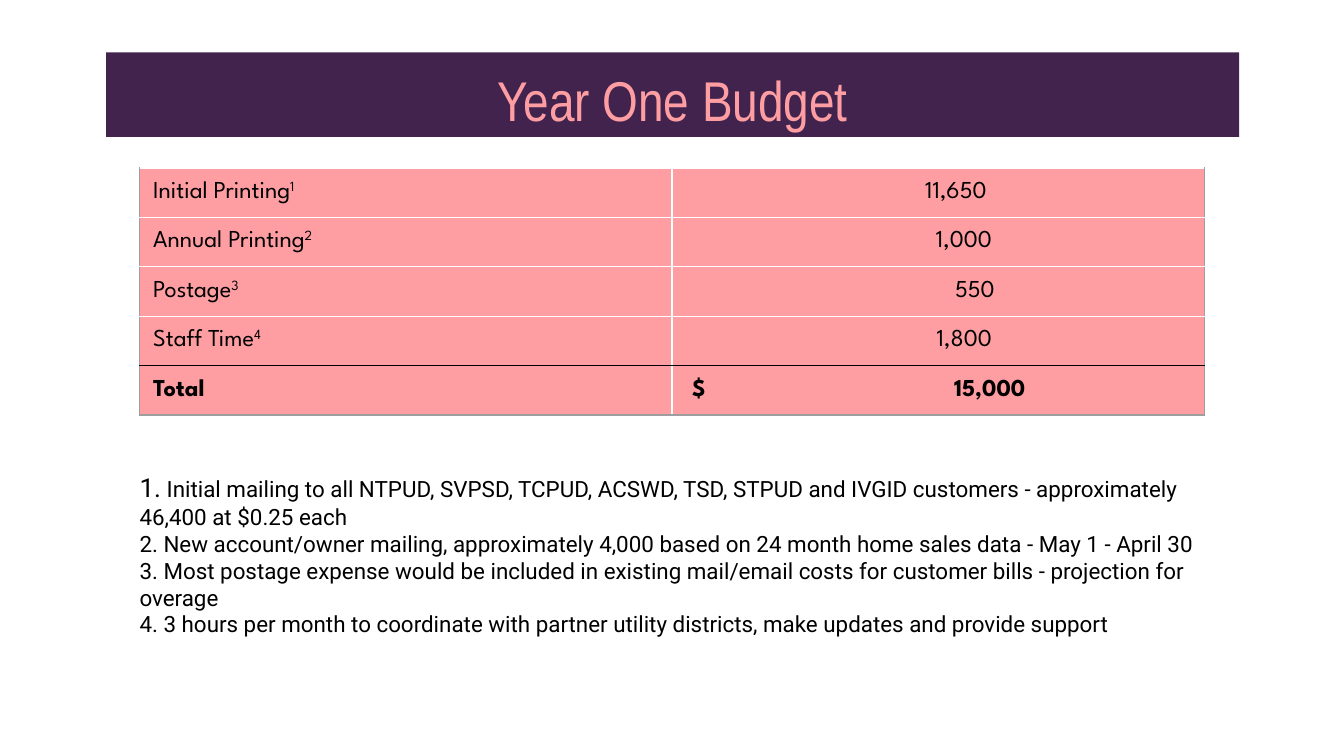
from dataclasses import dataclass

from lxml.etree import SubElement
from pptx import Presentation
from pptx.dml.color import RGBColor
from pptx.enum.shapes import MSO_SHAPE
from pptx.enum.text import MSO_ANCHOR, PP_ALIGN
from pptx.oxml.ns import qn
from pptx.util import Inches, Pt

PLUM = RGBColor(0x42, 0x23, 0x4E)
PINK = RGBColor(0xFE, 0x9E, 0xA2)
BLACK = RGBColor(0, 0, 0)
WHITE = RGBColor(255, 255, 255)
GRAY = RGBColor(0x9E, 0x9E, 0x9E)


@dataclass
class BudgetItem:
    name: str
    amount: str
    note: str = ""
    right_margin: float = 1.58


ITEMS = [
    BudgetItem("Initial Printing", "11,650", "1", 1.62),
    BudgetItem("Annual Printing", "1,000", "2"),
    BudgetItem("Postage", "550", "3", 1.56),
    BudgetItem("Staff Time", "1,800", "4"),
    BudgetItem("Total", "$\t15,000", right_margin=0.1),
]

NOTES = [
    "Initial mailing to all NTPUD, SVPSD, TCPUD, ACSWD, TSD, STPUD and IVGID "
    "customers - approximately 46,400 at $0.25 each",
    "New account/owner mailing, approximately 4,000 based on 24 month home sales "
    "data - May 1 - April 30",
    "Most postage expense would be included in existing mail/email costs for "
    "customer bills - projection for overage",
    "3 hours per month to coordinate with partner utility districts, make updates "
    "and provide support",
]


def set_font(font, name: str, size: float, color: RGBColor, bold: bool = False) -> None:
    font.name, font.size, font.bold = name, Pt(size), bold
    font.color.rgb = color


def add_title(slide, text: str) -> None:
    sp = slide.shapes.add_shape(
        MSO_SHAPE.RECTANGLE, Inches(0.79), Inches(0.39), Inches(8.43), Inches(0.63))
    sp.shadow.inherit = False
    sp.fill.solid()
    sp.fill.fore_color.rgb = PLUM
    sp.line.fill.background()
    tf = sp.text_frame
    tf.vertical_anchor = MSO_ANCHOR.TOP
    tf.margin_top = tf.margin_bottom = Inches(0.1)
    p = tf.paragraphs[0]
    p.text = text
    p.alignment = PP_ALIGN.CENTER
    set_font(p.font, "Arial Narrow", 30, PINK)


def style_cell(cell, borders: dict[str, RGBColor]) -> None:
    cell.margin_left = cell.margin_right = Inches(0.1)
    cell.margin_top = cell.margin_bottom = Inches(0.1)
    tc_pr = cell._tc.get_or_add_tcPr()
    for side, color in borders.items():
        ln = SubElement(tc_pr, qn(f"a:{side}"), w=str(Pt(0.75)))
        fill = SubElement(ln, qn("a:solidFill"))
        SubElement(fill, qn("a:srgbClr"), val=str(color))
    cell.fill.solid()
    cell.fill.fore_color.rgb = PINK


def add_tab(p, position: int) -> None:
    tabs = SubElement(p._p.get_or_add_pPr(), qn("a:tabLst"))
    SubElement(tabs, qn("a:tab"), pos=str(position), algn="l")


def add_budget(slide, items: list[BudgetItem]) -> None:
    last = len(items) - 1
    table = slide.shapes.add_table(
        len(items), 2, Inches(1.04), Inches(1.25), Inches(7.92),
        Inches(0.36 * len(items))).table
    table.first_row = table.horz_banding = False
    for i, item in enumerate(items):
        top = BLACK if i == last else WHITE
        bottom = {last - 1: BLACK, last: GRAY}.get(i, WHITE)
        name, amount = table.cell(i, 0), table.cell(i, 1)
        style_cell(name, {"lnL": GRAY, "lnR": WHITE, "lnT": top, "lnB": bottom})
        style_cell(amount, {"lnL": WHITE, "lnR": GRAY, "lnT": top, "lnB": bottom})

        p = name.text_frame.paragraphs[0]
        p.add_run().text = item.name
        if item.note:
            r = p.add_run()
            r.text = item.note
            r.font._element.set("baseline", "30000")
        set_font(p.font, "League Spartan", 13, BLACK, i == last)

        p = amount.text_frame.paragraphs[0]
        p.text = item.amount
        amount.margin_right = Inches(item.right_margin)
        if i == last:
            amount.margin_left = Inches(0.15)
            add_tab(p, Inches(1.95))
        else:
            p.alignment = PP_ALIGN.RIGHT
        set_font(p.font, "League Spartan", 13, BLACK, i == last)


def add_notes(slide, notes: list[str]) -> None:
    tf = slide.shapes.add_textbox(
        Inches(0.94), Inches(3.41), Inches(8.23), Inches(1.18)).text_frame
    tf.word_wrap = True
    tf.margin_left = tf.margin_right = Inches(0.1)
    tf.margin_top = tf.margin_bottom = Inches(0.1)
    for i, note in enumerate(notes):
        p = tf.paragraphs[0] if i == 0 else tf.add_paragraph()
        number = p.add_run()
        number.text = f"{i + 1}."
        if i == 0:
            number.font.size = Pt(14)
        p.add_run().text = f" {note}"
        set_font(p.font, "Roboto", 12, BLACK)


def main() -> None:
    prs = Presentation()
    prs.slide_width = Inches(10)
    prs.slide_height = prs.slide_width * 9 // 16
    slide = prs.slides.add_slide(prs.slide_layouts[6])
    add_title(slide, "Year One Budget")
    add_budget(slide, ITEMS)
    add_notes(slide, NOTES)
    prs.save("out.pptx")


if __name__ == "__main__":
    main()
